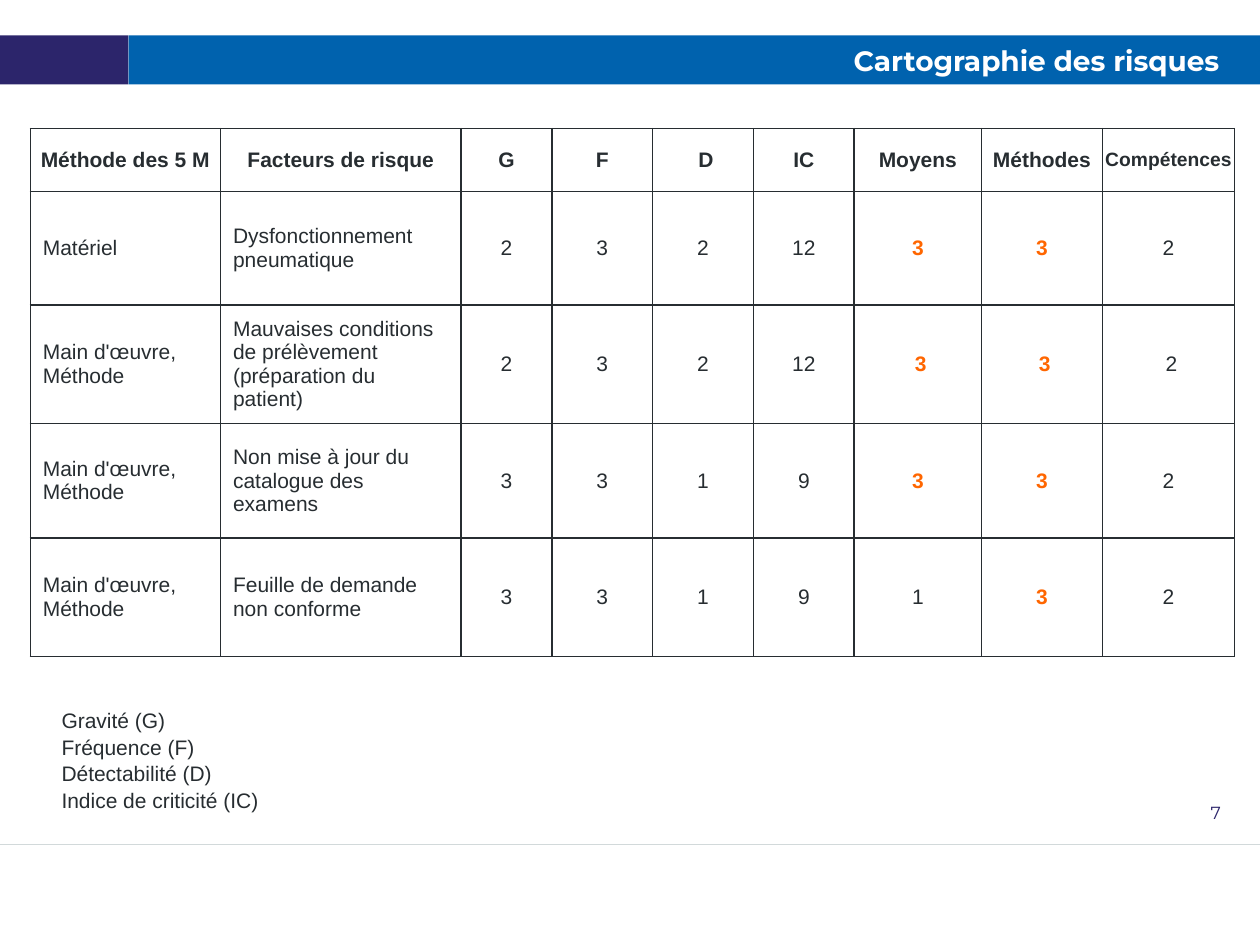
from typing import NamedTuple

from lxml import etree
from pptx import Presentation, util as u
from pptx.dml.color import RGBColor
from pptx.enum import shapes, text
from pptx.oxml import ns

HUES = {"navy": "2C256B", "blue": "0062AE", "rule": "D2D9DA",
        "ink": "272D31", "alert": "FF6600", "white": "FFFFFF"}
COLS, ROWS = 100, 75  # slide grid
STEP = u.Inches(0.1)
LEFT, MID, RIGHT = text.PP_ALIGN.LEFT, text.PP_ALIGN.CENTER, text.PP_ALIGN.RIGHT
BAR = (2.8, 3.9)  # top and height of the title band, in rows


class Box(NamedTuple):
    x: float
    y: float
    w: float
    h: float


class Style(NamedTuple):
    size: float = 12
    hue: str = "ink"
    bold: bool = False
    font: str = "Arial"


class Risk(NamedTuple):
    method: str
    factor: str
    marks: tuple
    means: tuple
    pad: str = ""


BODY, HEAD, ALERT = Style(), Style(bold=True), Style(hue="alert", bold=True)
STAFF = "Main d'œuvre, Méthode"
HEADS = ("Méthode des 5 M", "Facteurs de risque", "G", "F", " D", "IC",
         "Moyens", "Méthodes", "Compétences")
WIDTHS = (15.1, 19.1, 7.2, 8, 8, 8, 10.1, 9.6, 10.5)
HEIGHTS = (5, 9, 9.4, 9.1, 9.4)
RISKS = (
    Risk("Matériel", "Dysfonctionnement pneumatique", (2, 3, 2, 12), (3, 3, 2)),
    Risk(STAFF, "Mauvaises conditions de prélèvement (préparation du patient)",
         (2, 3, 2, 12), (3, 3, 2), pad=" "),
    Risk(STAFF, "Non mise à jour du catalogue des examens",
         (3, 3, 1, 9), (3, 3, 2)),
    Risk(STAFF, "Feuille de demande non conforme", (3, 3, 1, 9), (1, 3, 2)),
)
LEGEND = ("Gravité (G)", "Fréquence (F)", "Détectabilité (D)",
          "Indice de criticité (IC)")


def grid(n: float) -> int:
    return round(n * STEP)


def color(name: str) -> RGBColor:
    return RGBColor.from_string(HUES[name])


def write(frame, lines: tuple, style: Style, align=LEFT, space=None) -> None:
    for i, line in enumerate(lines):
        para = frame.add_paragraph() if i else frame.paragraphs[0]
        para.alignment = align
        para.line_spacing = space
        run = para.add_run()
        run.text = line
        run.font.size = u.Pt(style.size)
        run.font.name = style.font
        run.font.bold = style.bold
        run.font.color.rgb = color(style.hue)


def clear(item) -> None:
    """Remove the inner margins of a text frame or cell."""
    item.margin_left = item.margin_right = 0
    item.margin_top = item.margin_bottom = 0


def center(frame) -> None:
    clear(frame)
    frame.word_wrap = True
    frame.auto_size = text.MSO_AUTO_SIZE.NONE
    frame.vertical_anchor = text.MSO_ANCHOR.MIDDLE


def band(slide, box: Box, hue: str) -> None:
    shape = slide.shapes.add_shape(shapes.MSO_SHAPE.RECTANGLE, *map(grid, box))
    shape.shadow.inherit = False
    shape.fill.solid()
    shape.fill.fore_color.rgb = color(hue)
    shape.line.fill.background()


def rule(slide, row: float) -> None:
    line = slide.shapes.add_connector(shapes.MSO_CONNECTOR.STRAIGHT,
                                      0, grid(row), grid(COLS), grid(row))
    line.line.color.rgb = color("rule")
    line.line.width = u.Pt(0.75)
    etree.SubElement(line._element.spPr, ns.qn("a:effectLst"))


def border(cell) -> None:
    props = cell._tc.get_or_add_tcPr()
    for side in ("lnL", "lnR", "lnT", "lnB"):
        line = etree.SubElement(props, ns.qn(f"a:{side}"), w=str(u.Pt(1)))
        fill = etree.SubElement(line, ns.qn("a:solidFill"))
        etree.SubElement(fill, ns.qn("a:srgbClr"), val=HUES["ink"])


def put(cell, words: str, style: Style, align=MID) -> None:
    border(cell)
    cell.fill.background()
    cell.vertical_anchor = text.MSO_ANCHOR.MIDDLE
    write(cell.text_frame, (words,), style, align)


def risks(slide, x: float, y: float) -> None:
    box = Box(x, y, sum(WIDTHS), sum(HEIGHTS))
    table = slide.shapes.add_table(len(HEIGHTS), len(WIDTHS),
                                   *map(grid, box)).table
    table.first_row = table.horz_banding = False
    for col, width in zip(table.columns, WIDTHS):
        col.width = grid(width)
    for row, height in zip(table.rows, HEIGHTS):
        row.height = grid(height)
    for col, head in enumerate(HEADS):
        cell = table.cell(0, col)
        clear(cell)
        put(cell, head, HEAD._replace(size=11) if head == HEADS[-1] else HEAD)
    for row, risk in enumerate(RISKS, 1):
        for col, words in enumerate((risk.method, risk.factor)):
            put(table.cell(row, col), words, BODY, LEFT)
        for col, mark in enumerate(risk.marks, 2):
            put(table.cell(row, col), str(mark), BODY)
        for col, mark in enumerate(risk.means, 2 + len(risk.marks)):
            put(table.cell(row, col), f"{risk.pad}{mark}",
                ALERT if mark == 3 else BODY)


def title(slide, words: str) -> None:
    shape = slide.shapes.title
    slide.shapes._spTree.append(shape._element)  # in front of the band
    box = Box(11, BAR[0], 85.8, BAR[1])
    shape.left, shape.top, shape.width, shape.height = map(grid, box)
    center(shape.text_frame)
    write(shape.text_frame, (words,),
          Style(16, "white", True, "Montserrat"), RIGHT)


def main() -> None:
    deck = Presentation()
    deck.slide_width, deck.slide_height = grid(COLS), grid(ROWS)
    slide = deck.slides.add_slide(deck.slide_layouts[5])

    split = 10.2
    band(slide, Box(0, BAR[0], split, BAR[1]), "navy")
    band(slide, Box(split, BAR[0], COLS - split, BAR[1]), "blue")
    rule(slide, 67)
    title(slide, "Cartographie des risques")

    page = slide.shapes.add_textbox(*map(grid, Box(89.4, 61.9, 7.5, 5.1)))
    center(page.text_frame)
    write(page.text_frame, ("7",), Style(10, "navy", font="Montserrat"), RIGHT)

    risks(slide, 2.4, 10.2)

    legend = slide.shapes.add_textbox(*map(grid, Box(3.9, 55.6, 33.6, 9.1)))
    legend.text_frame.word_wrap = True
    write(legend.text_frame, LEGEND, BODY, space=1.05)
    deck.save("out.pptx")


if __name__ == "__main__":
    main()
